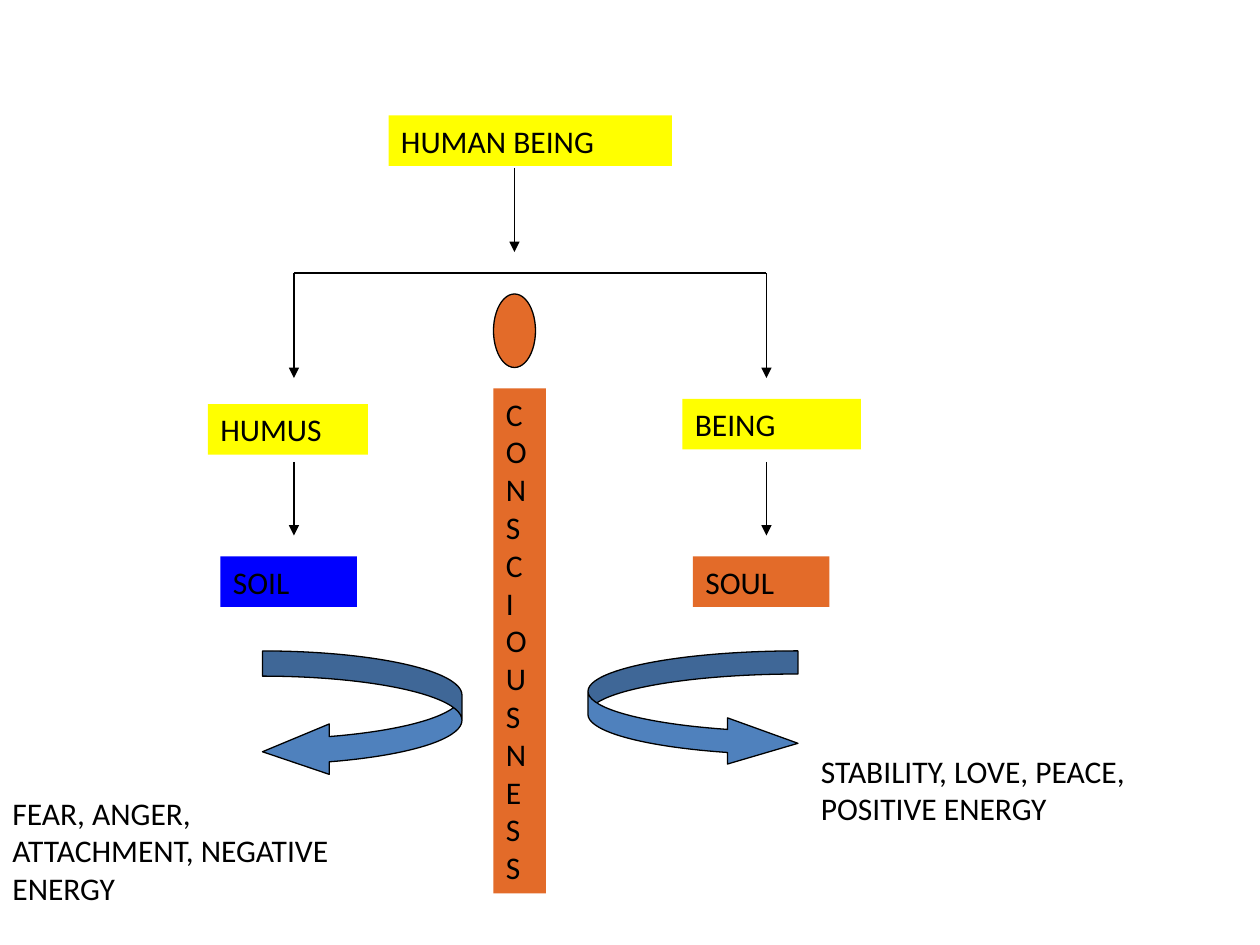
from dataclasses import dataclass

from lxml.etree import SubElement as Sub
from pptx import Presentation
from pptx.dml.color import RGBColor as Rgb
from pptx.enum.shapes import MSO_CONNECTOR as Conn, MSO_SHAPE as Kind
from pptx.enum.text import MSO_ANCHOR as Anchor, PP_ALIGN as Align
from pptx.oxml.ns import qn
from pptx.util import Pt


@dataclass(frozen=True)
class Theme:
    """Hold the colours, font and sizes."""
    ink: Rgb = Rgb(0, 0, 0)
    gold: Rgb = Rgb(255, 255, 0)
    rust: Rgb = Rgb(0xE3, 0x6B, 0x29)
    blue: Rgb = Rgb(0, 0, 255)
    steel: Rgb = Rgb(0x4F, 0x81, 0xBD)
    font: str = "Calibri"
    size: float = 18
    rule: float = 0.75


THEME = Theme()


def write(frame, text, size=THEME.size, color=THEME.ink, align=Align.LEFT):
    """Put formatted text in a frame."""
    frame.word_wrap = True
    frame.vertical_anchor = Anchor.TOP
    para = frame.paragraphs[0]
    para.text = text
    para.alignment = align
    for run in para.runs:
        run.font.name = THEME.font
        run.font.size = Pt(size)
        run.font.color.rgb = color


def shape(slide, kind, area, fill, edge=True, adj=()):
    """Add a filled preset shape."""
    item = slide.shapes.add_shape(kind, *map(Pt, area))
    item.shadow.inherit = False
    item.fill.solid()
    item.fill.fore_color.rgb = fill
    if edge:
        item.line.color.rgb = THEME.ink
        item.line.width = Pt(THEME.rule)
    else:
        item.line.fill.background()
    for i, value in enumerate(adj):
        item.adjustments[i] = value
    return item


def box(slide, text, area, fill):
    """Add a borderless box with text."""
    write(shape(slide, Kind.RECTANGLE, area, fill, edge=False).text_frame, text)


def note(slide, text, area):
    """Add plain text."""
    write(slide.shapes.add_textbox(*map(Pt, area)).text_frame, text)


def line(slide, start, end, head=True):
    """Add a straight line, with an arrowhead if asked."""
    item = slide.shapes.add_connector(Conn.STRAIGHT, *map(Pt, start + end))
    item.line.color.rgb = THEME.ink
    item.line.width = Pt(THEME.rule)
    props = item._element.spPr
    if head:
        Sub(props.find(qn("a:ln")), qn("a:tailEnd"), type="triangle")
    Sub(props, qn("a:effectLst"))


def main():
    """Build and save the slide."""
    deck = Presentation()
    deck.slide_width, deck.slide_height = Pt(720), Pt(540)
    slide = deck.slides.add_slide(deck.slide_layouts[6])
    left, mid, right, fork, tall = 168, 294, 438, 156, 28.8

    line(slide, (mid, 96), (mid, 144))
    line(slide, (left, fork), (right, fork), head=False)
    for x in (left, right):
        line(slide, (x, fork), (x, 216))
        line(slide, (x, 264), (x, 306))

    for text, x, y, wide, fill in (
        ("HUMAN BEING", 222, 66, 162, THEME.gold),
        ("HUMUS", 118.8, 231, 91.5, THEME.gold),
        ("BEING", 390, 228, 102, THEME.gold),
        ("SOIL", 126, 318, 78, THEME.blue),
        ("SOUL", 396, 318, 78, THEME.rust),
    ):
        box(slide, text, (x, y, wide, tall), fill)

    box(slide, "\v".join("CONSCIOUSNESS"), (282, 222, 30, 288.5), THEME.rust)
    shape(slide, Kind.OVAL, (282, 168, 24, 42), THEME.rust)
    shape(slide, Kind.CURVED_LEFT_ARROW, (150, 372, 114, 72),
          THEME.steel, adj=(0.2, 0.4, 0.53))
    shape(slide, Kind.CURVED_RIGHT_ARROW, (336, 372, 120, 66),
          THEME.steel, adj=(0.2, 0.4, 0.61))

    note(slide, "FEAR, ANGER, ATTACHMENT, NEGATIVE ENERGY", (0, 450, 198, 72))
    note(slide, "STABILITY, LOVE, PEACE, POSITIVE ENERGY", (462, 426, 228, 72))
    deck.save("out.pptx")


if __name__ == "__main__":
    main()
